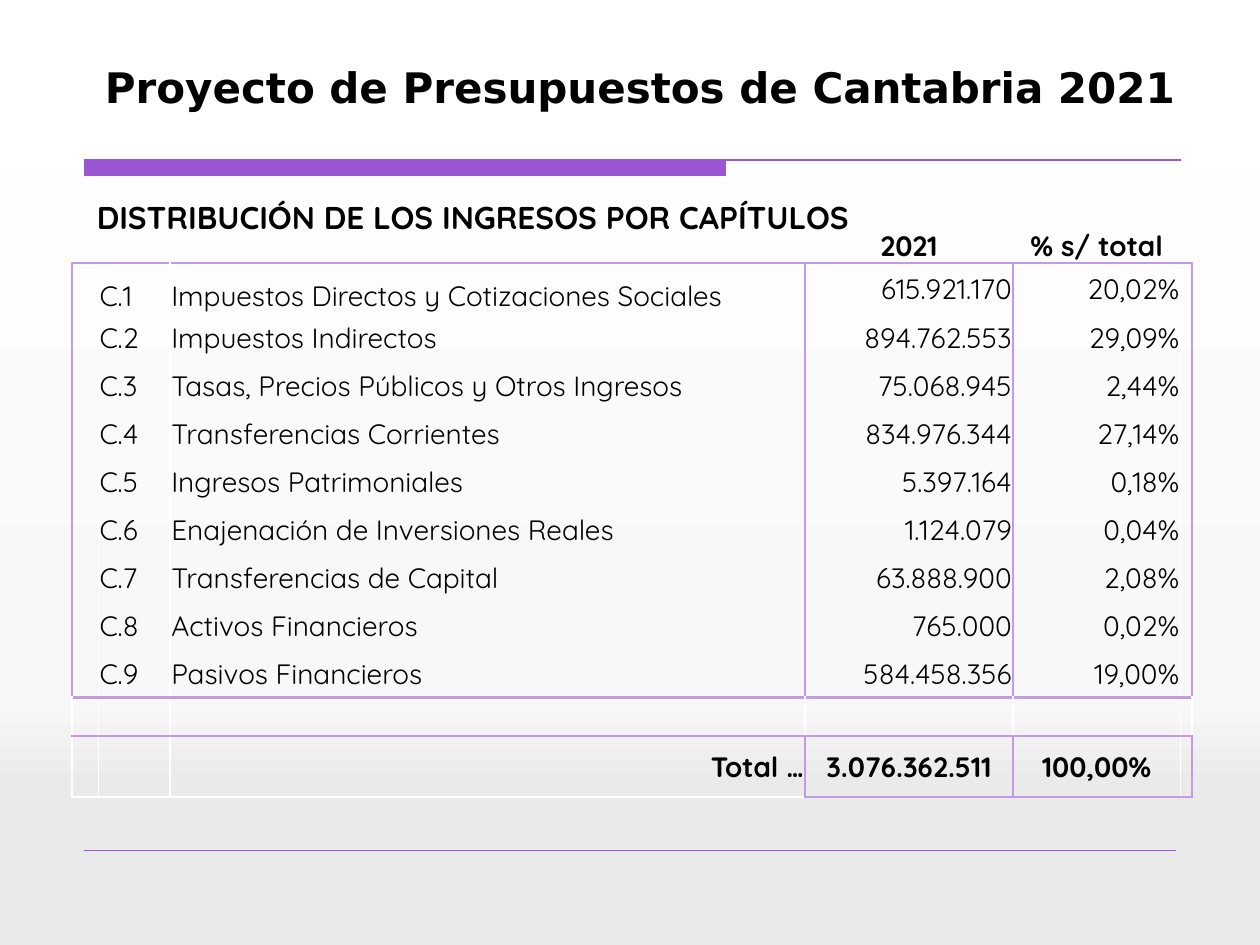
import pptx
import pptx.util
import pptx.dml.color
import pptx.enum.shapes
import pptx.enum.text
import pptx.oxml
import pptx.oxml.ns

COLORS = {"accent": "9B57D3", "rule": "C39AE5", "paper": "FFFFFF",
          "mist": "F8F8F8", "fog": "EAEAEA", "ink": "000000"}
WIDTH, HEIGHT = pptx.util.Inches(10), pptx.util.Inches(7.5)
PLAIN_STYLE = "{2D5ABB26-0587-4C30-8999-92F81FD0307C}"
ALIGN = pptx.enum.text.PP_ALIGN
ANCHOR = pptx.enum.text.MSO_ANCHOR
TITLE = "Proyecto de Presupuestos de Cantabria 2021"
SUBTITLE = "DISTRIBUCIÓN DE LOS INGRESOS POR CAPÍTULOS"
CHAPTERS = [
    ("Impuestos Directos y Cotizaciones Sociales", "615.921.170", "20,02%"),
    ("Impuestos Indirectos", "894.762.553", "29,09%"),
    ("Tasas, Precios Públicos y Otros Ingresos", "75.068.945", "2,44%"),
    ("Transferencias Corrientes", "834.976.344", "27,14%"),
    ("Ingresos Patrimoniales", "5.397.164", "0,18%"),
    ("Enajenación de Inversiones Reales", "1.124.079", "0,04%"),
    ("Transferencias de Capital", "63.888.900", "2,08%"),
    ("Activos Financieros", "765.000", "0,02%"),
    ("Pasivos Financieros", "584.458.356", "19,00%"),
]
COLUMN_SHARES = [2.1, 5.7, 50.4, 16.5, 13.3, 0.9]
ROW_SHARES = [4.13, 5.33] + [5.08] * len(CHAPTERS[1:]) + [4.13, 6.4]
BLANK_ROW = len(CHAPTERS) + 1
TOTAL_ROW = BLANK_ROW + 1


def across(percent):
    return round(WIDTH * percent / 100)


def down(percent):
    return round(HEIGHT * percent / 100)


def color(name):
    return pptx.dml.color.RGBColor.from_string(COLORS[name])


def make_element(xml):
    tag, rest = xml.split(" ", 1) if " " in xml.split(">")[0] else (xml[:-2], "/>")
    return pptx.oxml.parse_xml(f"{tag} {pptx.oxml.ns.nsdecls('a')} {rest}")


def style_para(para, font, size, bold, align):
    para.alignment = align
    for span in para.runs:
        span.font.name = font
        span.font.size = pptx.util.Pt(size)
        span.font.bold = bold
        span.font.color.rgb = color("ink")


def paint_background(page):
    fill = page.background.fill
    fill.gradient()
    fill.gradient_angle = 270
    stops = page.background._cSld.find(".//" + pptx.oxml.ns.qn("a:gsLst"))
    for stop in list(stops):
        stops.remove(stop)
    for place, name in [(0, "paper"), (74, "mist"), (83, "fog"), (100, "fog")]:
        stops.append(make_element(
            f'<a:gs pos="{place * 1000}"><a:srgbClr val="{COLORS[name]}"/></a:gs>'))


def add_text(page, words, left, top, width, height, font, size, align):
    box = page.shapes.add_textbox(across(left), down(top), across(width), down(height))
    frame = box.text_frame
    frame.word_wrap = True
    frame.text = words
    style_para(frame.paragraphs[0], font, size, True, align)


def add_title_band(page, left, top, band_right, right, height):
    x, y = across(left), down(top)
    low = down(top + height)
    builder = page.shapes.build_freeform(x, y)
    builder.add_line_segments(
        [(across(band_right), y), (across(band_right), low), (x, low)], close=True)
    builder.move_to(x, y)
    builder.add_line_segments([(across(right), y)], close=False)
    band = builder.convert_to_shape()
    band.shadow.inherit = False
    band.fill.solid()
    band.fill.fore_color.rgb = color("accent")
    band.line.color.rgb = color("accent")
    band.line.width = pptx.util.Pt(0.75)


def add_rule(page, left, right, top):
    rule = page.shapes.add_connector(
        pptx.enum.shapes.MSO_CONNECTOR.STRAIGHT,
        across(left), down(top), across(right), down(top))
    rule.line.color.rgb = color("accent")
    rule.line.width = pptx.util.Pt(0.25)
    rule._element.spPr.append(make_element("<a:effectLst/>"))


def vertical_edge(row, edge):
    if 1 <= row < BLANK_ROW and edge in (0, 3, 4, 6):
        return "rule"
    if row == TOTAL_ROW and edge in (3, 4, 6):
        return "rule"
    return "paper"


def horizontal_edge(edge, column):
    if edge in (1, BLANK_ROW, TOTAL_ROW):
        return "rule"
    if edge == TOTAL_ROW + 1:
        return "rule" if column >= 3 else "paper"
    return "paper" if edge == 0 else None


def set_borders(cell, row, column):
    sides = [("L", vertical_edge(row, column)), ("R", vertical_edge(row, column + 1)),
             ("T", horizontal_edge(row, column)), ("B", horizontal_edge(row + 1, column))]
    properties = cell._tc.get_or_add_tcPr()
    for index, (side, name) in enumerate(sides):
        weight = pptx.util.Pt(1.5 if name == "rule" else 1)
        paint = (f'<a:solidFill><a:srgbClr val="{COLORS[name]}"/></a:solidFill>'
                 if name else "<a:noFill/>")
        properties.insert(index, make_element(
            f'<a:ln{side} w="{weight}">{paint}</a:ln{side}>'))


def fill_cell(cell, words, row, column):
    cell.margin_left = cell.margin_right = cell.margin_top = pptx.util.Inches(0.01)
    cell.margin_bottom = 0
    low = row == 0 or (row == 1 and column < 3)
    cell.vertical_anchor = ANCHOR.BOTTOM if low else ANCHOR.MIDDLE
    cell.fill.background()
    set_borders(cell, row, column)
    para = cell.text_frame.paragraphs[0]
    if not words:
        para._p.append(make_element('<a:endParaRPr sz="1000"/>'))
        return
    para.text = words
    bold = row in (0, TOTAL_ROW)
    if column >= 3:
        align = ALIGN.CENTER if bold else ALIGN.RIGHT
    else:
        align = ALIGN.RIGHT if bold else ALIGN.LEFT
    style_para(para, "Quicksand", 16, bold, align)


def add_income_table(page, left, top):
    lines = [("", "", "", "2021", "% s/ total", "")]
    lines += [("", f"C.{number}", *chapter, "")
              for number, chapter in enumerate(CHAPTERS, 1)]
    lines += [("",) * 6, ("", "", "Total …", "3.076.362.511", "100,00%", "")]
    frame = page.shapes.add_table(
        len(lines), len(COLUMN_SHARES), across(left), down(top),
        across(sum(COLUMN_SHARES)), down(sum(ROW_SHARES)))
    table = frame.table
    table.first_row = table.horz_banding = False
    table._tbl.tblPr.find(pptx.oxml.ns.qn("a:tableStyleId")).text = PLAIN_STYLE
    for column, share in zip(table.columns, COLUMN_SHARES):
        column.width = across(share)
    for row, share in zip(table.rows, ROW_SHARES):
        row.height = down(share)
    for row, line in enumerate(lines):
        for column, words in enumerate(line):
            fill_cell(table.cell(row, column), words, row, column)
    table.cell(0, 1).merge(table.cell(0, 2))


def main():
    deck = pptx.Presentation()
    deck.slide_width, deck.slide_height = WIDTH, HEIGHT
    page = deck.slides.add_slide(deck.slide_layouts[6])
    paint_background(page)
    add_title_band(page, 6.7, 16.93, 57.6, 93.7, 1.6)
    add_rule(page, 6.7, 93.3, 90)
    add_text(page, TITLE, 6.7, 5.87, 88.2, 14.8, "DejaVu Sans", 24, ALIGN.CENTER)
    add_income_table(page, 5.7, 23.73)
    add_text(page, SUBTITLE, 6.7, 20.27, 82.7, 5.33, "Quicksand", 18, ALIGN.LEFT)
    deck.save("out.pptx")


if __name__ == "__main__":
    main()
